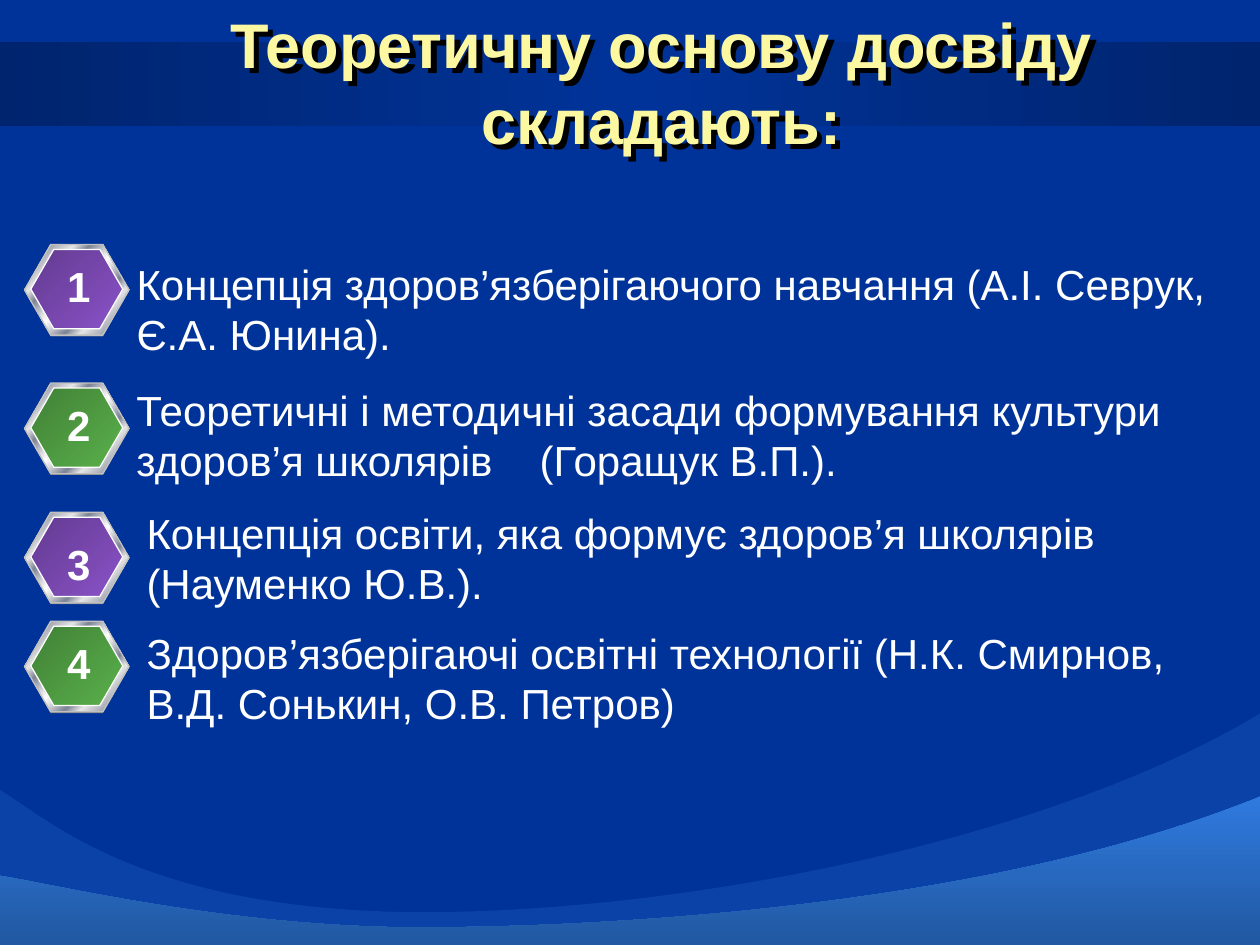
"""Build a slide listing four theoretical foundations beside hexagonal number badges."""
from dataclasses import dataclass

from lxml.etree import SubElement
from pptx import Presentation
from pptx.dml.color import RGBColor
from pptx.enum.shapes import MSO_SHAPE as SHAPE
from pptx.enum.text import MSO_ANCHOR as ANCHOR, MSO_AUTO_SIZE as AUTO, PP_ALIGN as ALIGN
from pptx.oxml import parse_xml
from pptx.oxml.ns import nsdecls, qn
from pptx.util import Inches, Pt

COLORS = {
    "background": "003399", "wave": "2F7ADF", "shade": "808080", "rim": "C0C0C0",
    "white": "FFFFFF", "title": "FCF8A2", "silver": "E6E6E6", "steel": "7D8496",
    "purple": "8A52C8", "green": "5AB14B",
}
COLUMNS, ROWS = 100, 75
FONT = "Arial"
DARK = "dark "
METAL = [(0, "silver"), (7, "steel"), (26, "silver"), (34, "steel"), (46, "silver"), (50, "white"),
         (54, "silver"), (66, "steel"), (74, "silver"), (93, "steel"), (100, "silver")]


@dataclass
class Item:
    """A numbered statement placed on the grid."""
    text: str
    color: str
    badge_row: float
    number_row: float
    text_col: float
    text_row: float
    text_cols: float


ITEMS = [
    Item("Концепція здоров’язберігаючого навчання (А.І. Севрук, Є.А. Юнина).",
         "purple", 19.4, 20.2, 9.85, 20, 90.2),
    Item("Теоретичні і методичні засади формування культури здоров’я школярів\t(Горащук В.П.).",
         "green", 30.4, 31.2, 9.85, 30, 87.4),
    Item("Концепція освіти, яка формує здоров’я школярів (Науменко Ю.В.).",
         "purple", 40.65, 42.25, 10.65, 39.75, 89.4),
    Item("Здоров’язберігаючі освітні технології (Н.К. Смирнов, В.Д. Сонькин, О.В. Петров)",
         "green", 49.3, 50.1, 10.65, 49.3, 86.6),
]
WAVE_BACK = [(0, 62.7), (4, 65.1), (11.6, 72.5), (34.3, 72.4), (57, 72.2), (84.9, 65.9), (100.2, 56.5)]
WAVE_FRONT = [(-0.1, 69.5), (3.6, 70), (18.6, 73.8), (34.6, 73.6), (50.6, 73.5), (79.7, 71.6), (100, 63.2)]

prs = Presentation()
prs.slide_width, prs.slide_height = Inches(10), Inches(7.5)


def grid(*cells: float) -> list[int]:
    """Turn alternating column and row counts into lengths."""
    units = (prs.slide_width / COLUMNS, prs.slide_height / ROWS)
    return [round(cell * units[i % 2]) for i, cell in enumerate(cells)]


def rgb(name: str) -> RGBColor:
    """Look up a named colour."""
    return RGBColor.from_string(COLORS[name])


def paint(sp, fill: str | None = None, line: str | None = None) -> None:
    """Set a solid fill and outline and drop the shadow."""
    sp.shadow.inherit = False
    if fill:
        sp.fill.solid()
        sp.fill.fore_color.rgb = rgb(fill)
    if line:
        sp.line.color.rgb = rgb(line)
        sp.line.width = Pt(0.75)
    else:
        sp.line.fill.background()


def gradient(sp, stops: list[tuple[int, str]], angle: int) -> None:
    """Fill a shape with a clockwise linear gradient, shading the dark stops."""
    sp.fill.gradient()
    fill = sp._element.spPr.find(qn("a:gradFill"))
    marks = ""
    for pos, name in stops:
        shade = '<a:shade val="47500"/>' if name.startswith(DARK) else ""
        marks += (f'<a:gs pos="{pos * 1000}"><a:srgbClr val="{COLORS[name.removeprefix(DARK)]}">'
                  f'{shade}</a:srgbClr></a:gs>')
    fill.getparent().replace(fill, parse_xml(
        f'<a:gradFill {nsdecls("a")} rotWithShape="1"><a:gsLst>{marks}</a:gsLst>'
        f'<a:lin ang="{angle * 60000}" scaled="0"/></a:gradFill>'))


def add_wave(shapes, curve: list[tuple[float, float]]):
    """Draw the area between a chain of cubic curves and the slide's bottom edge."""
    first, *rest = [tuple(grid(*point)) for point in curve]
    builder = shapes.build_freeform(*first, scale=1.0)
    builder.add_line_segments(rest + [tuple(grid(100, 75.1)), tuple(grid(0, 75.1))], close=True)
    sp = builder.convert_to_shape()
    lines = list(sp._element.iter(qn("a:lnTo")))
    for start in range(0, len(rest), 3):
        controls = lines[start:start + 3]
        controls[0].addprevious(parse_xml(f'<a:cubicBezTo {nsdecls("a")}/>'))
        cubic = controls[0].getprevious()
        for segment in controls:
            cubic.append(segment[0])
            segment.getparent().remove(segment)
    paint(sp, "wave")
    return sp


def add_badge(shapes, item: Item) -> None:
    """Draw a metal-rimmed hexagon as a group."""
    group = shapes.add_group_shape()
    layers = [
        ((1.95, item.badge_row + 0.1, 8.3, 7.2), None, None),
        ((1.95, item.badge_row, 8.3, 7.2), METAL, "rim"),
        ((2.45, item.badge_row + 0.4, 7.3, 6.3), [(0, DARK + item.color), (100, item.color)], "white"),
    ]
    for box, stops, line in layers:
        sp = group.shapes.add_shape(SHAPE.HEXAGON, *grid(*box))
        sp.adjustments[0] = 0.289
        paint(sp, "shade", line)
        if stops:
            gradient(sp, stops, 45)


def style(r, size: int, color: str, bold: bool = False) -> None:
    """Format a run."""
    r.font.name, r.font.size, r.font.bold = FONT, Pt(size), bold
    r.font.color.rgb = rgb(color)


def add_text(shapes, text: str, box: tuple, number: bool = False) -> None:
    """Add a statement, or a centred bold number."""
    tf = shapes.add_textbox(*grid(*box)).text_frame
    tf.word_wrap = not number
    p = tf.paragraphs[0]
    p.alignment = ALIGN.CENTER if number else ALIGN.LEFT
    if "\t" in text:
        tabs = SubElement(p._p.get_or_add_pPr(), qn("a:tabLst"))
        SubElement(tabs, qn("a:tab"), pos=str(Inches(3.2)), algn="l")
    r = p.add_run()
    r.text = text
    style(r, 24, "white", number)


def set_title(slide, text: str) -> None:
    """Place the title on top with a hard black shadow."""
    sp = slide.shapes.title
    sp.left, sp.top, sp.width, sp.height = grid(5, 3, 95, 6.9)
    sp.fill.background()
    sp._element.spPr.append(parse_xml(
        f'<a:effectLst {nsdecls("a")}><a:outerShdw dist="53882" dir="2700000" algn="ctr" rotWithShape="0">'
        '<a:srgbClr val="000000"/></a:outerShdw></a:effectLst>'))
    tf = sp.text_frame
    tf.word_wrap, tf.auto_size, tf.vertical_anchor = True, AUTO.NONE, ANCHOR.MIDDLE
    p = tf.paragraphs[0]
    p.alignment = ALIGN.CENTER
    r = p.add_run()
    r.text = text
    style(r, 36, "title", True)
    slide.shapes._spTree.append(sp._element)


def main() -> None:
    """Assemble and save the slide."""
    slide = prs.slides.add_slide(prs.slide_layouts[5])
    slide.background.fill.solid()
    slide.background.fill.fore_color.rgb = rgb("background")
    shapes = slide.shapes

    band = shapes.add_shape(SHAPE.RECTANGLE, *grid(0, 3.3, COLUMNS, 6.7))
    paint(band)
    gradient(band, [(0, DARK + "background"), (50, "background"), (100, DARK + "background")], 0)
    back = add_wave(shapes, WAVE_BACK)
    SubElement(back._element.spPr.find(qn("a:solidFill"))[0], qn("a:alpha"), val="22000")
    gradient(add_wave(shapes, WAVE_FRONT), [(0, "wave"), (100, DARK + "wave")], 90)

    for number, item in enumerate(ITEMS, 1):
        add_badge(shapes, item)
        add_text(shapes, item.text, (item.text_col, item.text_row, item.text_cols, 9.1))
        add_text(shapes, str(number), (4.3, item.number_row, 3.9, 5), number=True)
    set_title(slide, "Теоретичну основу досвіду складають:")
    prs.save("out.pptx")


if __name__ == "__main__":
    main()
